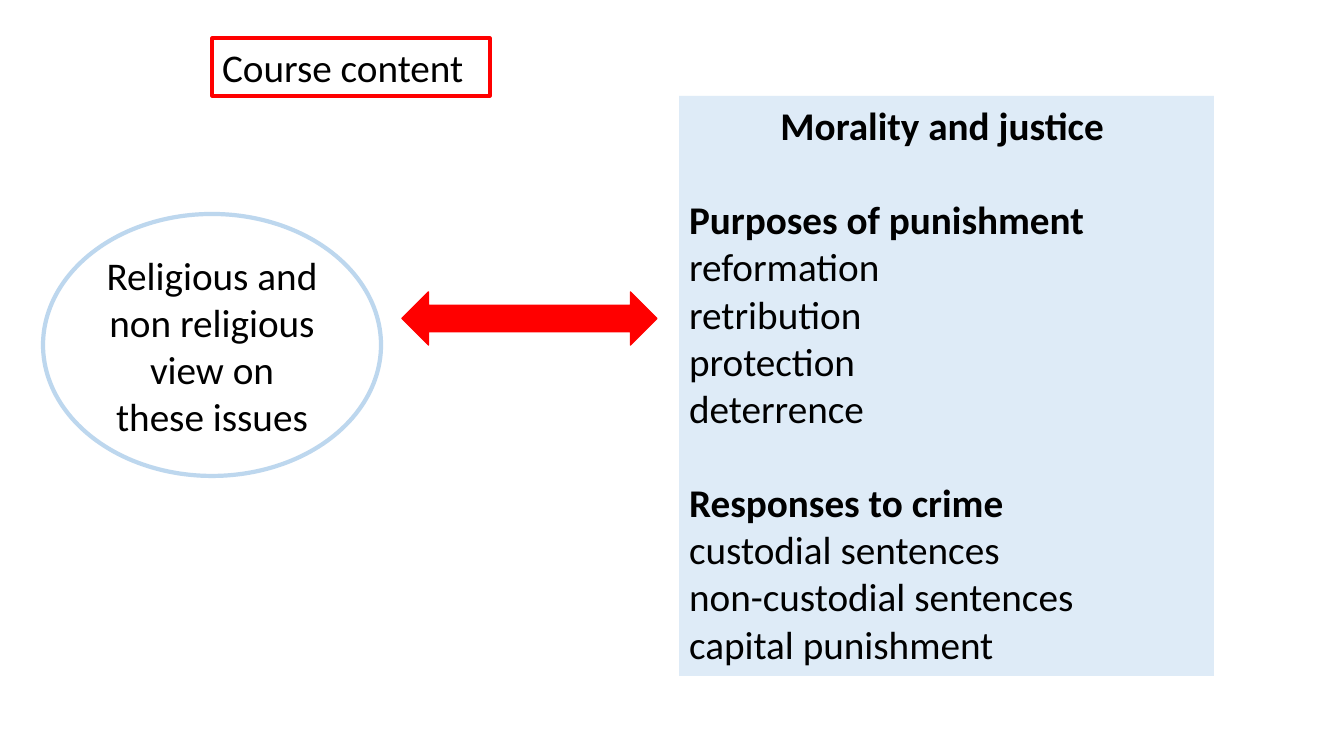
"""Build the course content slide on morality and justice."""
import pptx
import pptx.util
import pptx.dml.color
import pptx.enum.shapes
import pptx.enum.text
import lxml.etree

PX = 914400 / 100.8
HUES = {"red": "FF0000", "pale": "DEEBF7", "ring": "BDD7EE",
        "white": "FFFFFF", "ink": "000000"}
KIND = pptx.enum.shapes.MSO_SHAPE
ALIGN = pptx.enum.text.PP_ALIGN
ANCHOR = pptx.enum.text.MSO_ANCHOR


def paint(shape, box, fill=None, line=None, width=1):
    """Place a shape and set its fill and outline."""
    shape.left, shape.top, shape.width, shape.height = [round(n * PX) for n in box]
    if fill:
        shape.fill.solid()
        shape.fill.fore_color.rgb = pptx.dml.color.RGBColor.from_string(HUES[fill])
    if line:
        shape.line.color.rgb = pptx.dml.color.RGBColor.from_string(HUES[line])
        shape.line.width = pptx.util.Pt(width)


def style(para, align, bold=False):
    """Align a paragraph and set the font of its runs."""
    para.alignment = align
    for run in para.runs:
        run.font.name = "Calibri"
        run.font.size = pptx.util.Pt(28)
        run.font.bold = bold
        run.font.color.rgb = pptx.dml.color.RGBColor.from_string(HUES["ink"])


deck = pptx.Presentation()
deck.slide_width = round(1344 * PX)
deck.slide_height = round(756 * PX)
slide = deck.slides.add_slide(deck.slide_layouts[1])

title = slide.shapes.title
paint(title, (212, 38, 278, 58), line="red", width=2.25)
title.text_frame.text = "Course content"
style(title.text_frame.paragraphs[0], ALIGN.LEFT)

topics = slide.placeholders[1]
paint(topics, (679, 96, 535, 580), fill="pale")
heads = ["Morality and justice ", "Purposes of punishment", "Responses to crime"]
items = [heads[0],
         heads[1], "reformation", "retribution", "protection", "deterrence",
         heads[2], "custodial sentences", "non-custodial sentences",
         "capital punishment"]
topics.text_frame.text = "\n".join(items)
for item, para in zip(items, topics.text_frame.paragraphs):
    style(para, ALIGN.CENTER if item == heads[0] else ALIGN.LEFT, item in heads)
    para.space_before = pptx.util.Pt(34 if item in heads[1:] else 0)
    props = para._p.get_or_add_pPr()
    props.set("marL", "0")
    props.set("indent", "0")
    lxml.etree.SubElement(props, pptx.oxml.ns.qn("a:buNone"))

for holder in (title, topics):
    holder.text_frame.auto_size = pptx.enum.text.MSO_AUTO_SIZE.NONE
    holder.text_frame.vertical_anchor = ANCHOR.TOP

views = slide.shapes.add_shape(KIND.OVAL, 0, 0, 0, 0)
paint(views, (43, 214, 338, 262), "white", "ring", 3)
views.text_frame.text = "Religious and non religious view on these issues"
views.text_frame.word_wrap = True
views.text_frame.vertical_anchor = ANCHOR.MIDDLE
style(views.text_frame.paragraphs[0], ALIGN.CENTER)

arrow = slide.shapes.add_shape(KIND.LEFT_RIGHT_ARROW, 0, 0, 0, 0)
paint(arrow, (402, 292, 255, 53), "red", "red")
for shape in (views, arrow):
    shape.shadow.inherit = False

deck.save("out.pptx")
